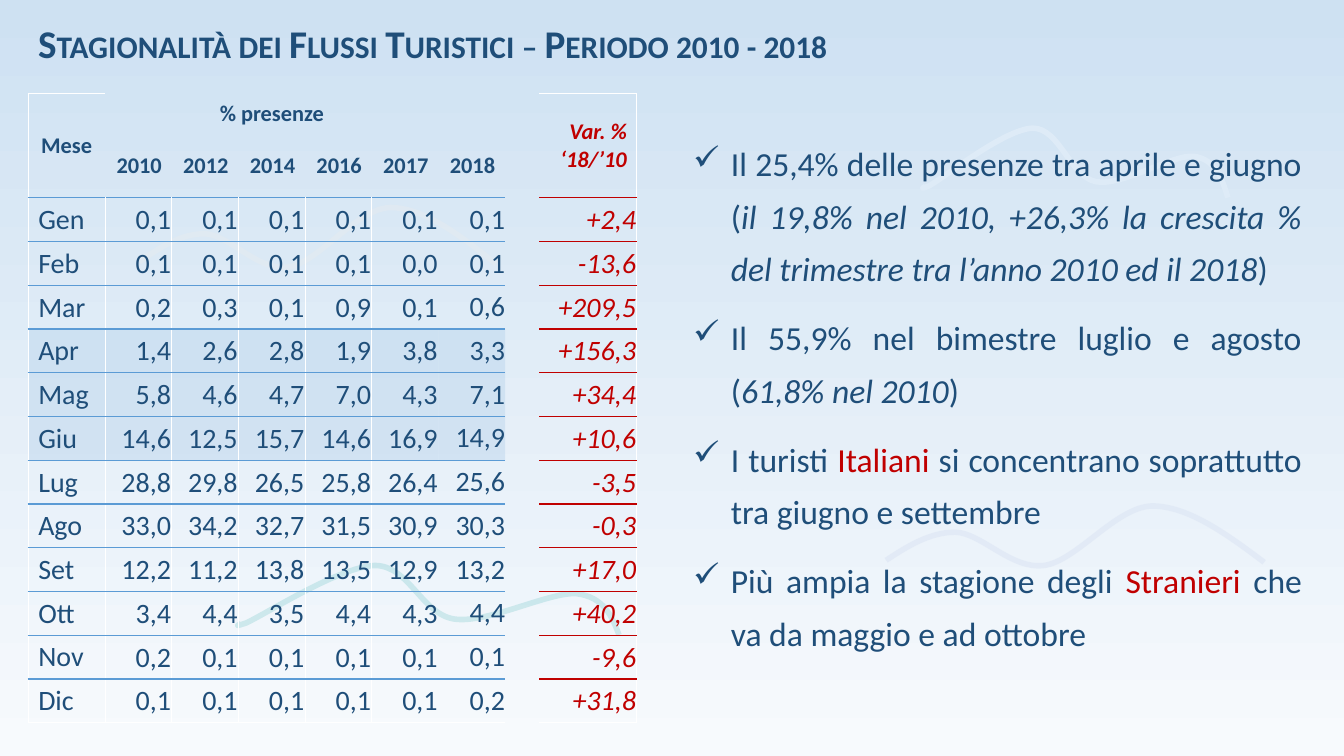
from dataclasses import dataclass
from typing import Any, Optional

from lxml import etree
from pptx import Presentation
from pptx.dml.color import RGBColor
from pptx.enum.text import MSO_ANCHOR, MSO_AUTO_SIZE, PP_ALIGN
from pptx.oxml.ns import qn
from pptx.util import Cm, Pt

CENTER, RIGHT, JUSTIFY = PP_ALIGN.CENTER, PP_ALIGN.RIGHT, PP_ALIGN.JUSTIFY
LEFT, MIDDLE, TOP = PP_ALIGN.LEFT, MSO_ANCHOR.MIDDLE, MSO_ANCHOR.TOP
FIT = MSO_AUTO_SIZE.SHAPE_TO_FIT_TEXT

NAVY = RGBColor(0x1F, 0x4E, 0x79)
RED = RGBColor(0xC0, 0x00, 0x00)
BLUE = RGBColor(0x5B, 0x9B, 0xD5)
WHITE = RGBColor(0xFF, 0xFF, 0xFF)
SPRING = RGBColor(0xBD, 0xD7, 0xEE)
SKY_LOW = RGBColor(0xF7, 0xFA, 0xFD)
SKY_HIGH = RGBColor(0xCE, 0xE1, 0xF2)
GREY = RGBColor(0xED, 0xED, 0xED)
LAVENDER = RGBColor(0xDA, 0xE3, 0xF3)
TEAL = RGBColor(0x00, 0x99, 0x99)
PALE_BLUE = RGBColor(0xDE, 0xEB, 0xF7)

FONT = "Calibri"
NO_STYLE = "{2D5ABB26-0587-4C30-8999-92F81FD0307C}"

# Wave outlines in cm: a start point, then three points for each curve
DOUBLE_HUMP = [(0, 1.37), (0.5, 1.02), (1.04, 0.66), (1.65, 0.66), (2.28, 0.69),
               (2.97, 1.6), (3.75, 1.5), (4.52, 1.4), (5.46, 0.03), (6.32, 0),
               (7.18, 0), (8.1, 0.71), (8.99, 1.42)]
FALLING = [(0, 1.47), (-0.23, 1.57), (0.13, 1.45), (0.13, 1.45), (0.69, 1.19),
           (2.49, 0.03), (3.38, 0), (4.24, 0), (4.55, 1.22), (5.38, 1.35),
           (6.22, 1.47), (7.77, 0.66), (8.46, 0.71), (9.14, 0.79), (9.35, 1.27),
           (9.53, 1.75)]


@dataclass
class Wave:
    outline: list[tuple[float, float]]
    left: float
    top: float
    stretch: float
    color: RGBColor
    opacity: int


@dataclass
class Span:
    text: str
    italic: bool = False
    color: RGBColor = NAVY


WAVES = [
    Wave(DOUBLE_HUMP, 3.51, 5.23, 1, GREY, 30),
    Wave(DOUBLE_HUMP, 22.33, 12.75, 1.06, LAVENDER, 50),
    Wave(FALLING, 6.07, 14.25, 1, TEAL, 15),
    Wave(FALLING, 23.32, 3.23, 0.8, PALE_BLUE, 100),
]

YEARS = ["2010", "2012", "2014", "2016", "2017", "2018"]
MONTHS = [line.split() for line in """\
Gen 0,1 0,1 0,1 0,1 0,1 0,1 +2,4
Feb 0,1 0,1 0,1 0,1 0,0 0,1 -13,6
Mar 0,2 0,3 0,1 0,9 0,1 0,6 +209,5
Apr 1,4 2,6 2,8 1,9 3,8 3,3 +156,3
Mag 5,8 4,6 4,7 7,0 4,3 7,1 +34,4
Giu 14,6 12,5 15,7 14,6 16,9 14,9 +10,6
Lug 28,8 29,8 26,5 25,8 26,4 25,6 -3,5
Ago 33,0 34,2 32,7 31,5 30,9 30,3 -0,3
Set 12,2 11,2 13,8 13,5 12,9 13,2 +17,0
Ott 3,4 4,4 3,5 4,4 4,3 4,4 +40,2
Nov 0,2 0,1 0,1 0,1 0,1 0,1 -9,6
Dic 0,1 0,1 0,1 0,1 0,1 0,2 +31,8""".splitlines()]
SPRING_MONTHS = ("Apr", "Mag", "Giu")
GAP_COL, VAR_COL, LAST_YEAR_COL = 7, 8, 6
COL_WIDTHS = [1.94] + [1.68] * len(YEARS) + [0.86, 2.46]

POINTS = [
    [Span("Il 25,4% delle presenze tra aprile e giugno ("),
     Span("il 19,8% nel 2010, +26,3% la crescita % del trimestre "
          "tra l’anno 2010 ed il 2018", italic=True), Span(")")],
    [Span("Il 55,9% nel bimestre luglio e agosto ("),
     Span("61,8% nel 2010", italic=True), Span(")")],
    [Span("I turisti "), Span("Italiani", color=RED),
     Span(" si concentrano soprattutto tra giugno e settembre")],
    [Span("Più ampia la stagione degli "), Span("Stranieri", color=RED),
     Span(" che va da maggio e ad ottobre")],
]


def add_text(p: Any, text: str, *, size: float, bold: bool = False, italic: bool = False,
             color: RGBColor = NAVY, small_caps: bool = False) -> None:
    r = p.add_run()
    r.text = text
    f = r.font
    f.name, f.size, f.bold, f.italic = FONT, Pt(size), bold, italic
    f.color.rgb = color
    if small_caps:
        f._element.set("cap", "small")


def set_opacity(element: Any, percent: int) -> None:
    clr = next(element.iter(qn("a:srgbClr")))
    etree.SubElement(clr, qn("a:alpha"), val=str(percent * 1000))


def add_wave(s: Any, wave: Wave) -> None:
    pts = [(Cm(wave.left + x * wave.stretch), Cm(wave.top + y)) for x, y in wave.outline]
    builder = s.shapes.build_freeform(*pts[0])
    builder.add_line_segments(pts[1:], close=False)
    sp = builder.convert_to_shape()
    sp.shadow.inherit = False
    sp.fill.background()
    sp.line.color.rgb = wave.color
    sp.line.width = Pt(4)
    if wave.opacity < 100:
        set_opacity(sp.line._ln, wave.opacity)
    # Turn each three segments into one cubic curve
    route = next(sp._element.iter(qn("a:path")))
    segments = route.findall(qn("a:lnTo"))
    for i in range(0, len(segments), 3):
        curve = etree.SubElement(route, qn("a:cubicBezTo"))
        for segment in segments[i:i + 3]:
            curve.append(segment[0])
            route.remove(segment)


def add_box(s: Any, left: float, top: float, width: float, height: float) -> Any:
    tf = s.shapes.add_textbox(Cm(left), Cm(top), Cm(width), Cm(height)).text_frame
    tf.word_wrap = True
    tf.auto_size = FIT
    return tf


def format_cell(cell: Any, edges: dict[str, RGBColor], fill: Optional[RGBColor] = None) -> None:
    tc_pr = cell._tc.get_or_add_tcPr()
    for side in "LRTB":
        ln = etree.SubElement(tc_pr, qn(f"a:ln{side}"), w=str(Pt(1)))
        if side in edges:
            solid = etree.SubElement(ln, qn("a:solidFill"))
            etree.SubElement(solid, qn("a:srgbClr"), val=str(edges[side]))
        else:
            etree.SubElement(ln, qn("a:noFill"))
    if fill is None:
        cell.fill.background()
    else:
        cell.fill.solid()
        cell.fill.fore_color.rgb = fill
        set_opacity(tc_pr.find(qn("a:solidFill")), 50)


def fill_cell(cell: Any, text: str, align: Any, anchor: Any = MIDDLE, **fmt: Any) -> None:
    cell.vertical_anchor = anchor
    p = cell.text_frame.paragraphs[0]
    p.alignment = align
    add_text(p, text, **fmt)


def month_edges(col: int, last: bool) -> dict[str, RGBColor]:
    if col == GAP_COL:
        return {}
    rule = RED if col == VAR_COL else BLUE
    edges = {"T": rule, "B": WHITE if last else rule}
    if col < LAST_YEAR_COL:
        edges["L"] = WHITE
    if col < LAST_YEAR_COL - 1 or col == VAR_COL:
        edges["R"] = WHITE
    return edges


def add_month_table(s: Any) -> None:
    rows = len(MONTHS) + 2
    frame = s.shapes.add_table(rows, len(COL_WIDTHS), Cm(0.71), Cm(2.36), Cm(15.34), Cm(15.16))
    tbl = frame.table
    tbl.first_row = tbl.horz_banding = False
    next(tbl._tbl.iter(qn("a:tableStyleId"))).text = NO_STYLE
    for column, width in zip(tbl.columns, COL_WIDTHS):
        column.width = Cm(width)
    for i, row in enumerate(tbl.rows):
        row.height = Cm(1.04 if i else 0.71)

    # Header
    header_edges = {(0, 0): {"L": WHITE, "T": WHITE, "B": BLUE},
                    (0, VAR_COL): {"T": WHITE, "R": WHITE, "B": RED}}
    header_edges.update({(1, c): {"B": BLUE} for c in range(1, GAP_COL)})
    for r in range(2):
        for c in range(len(COL_WIDTHS)):
            format_cell(tbl.cell(r, c), header_edges.get((r, c), {}))
    tbl.cell(0, 0).merge(tbl.cell(1, 0))
    tbl.cell(0, 1).merge(tbl.cell(0, 5))
    tbl.cell(0, VAR_COL).merge(tbl.cell(1, VAR_COL))
    fill_cell(tbl.cell(0, 0), "Mese", CENTER, size=16, bold=True)
    fill_cell(tbl.cell(0, 1), "% presenze", CENTER, size=16, bold=True)
    fill_cell(tbl.cell(0, VAR_COL), "Var. % ‘18/’10", RIGHT,
              size=16, bold=True, italic=True, color=RED)
    for c, year in enumerate(YEARS, 1):
        fill_cell(tbl.cell(1, c), year, RIGHT, size=16, bold=True)

    # Months
    for r, (month, *shares, change) in enumerate(MONTHS, 2):
        for c, text in enumerate([month, *shares, "", change]):
            cell = tbl.cell(r, c)
            shaded = month in SPRING_MONTHS and c < GAP_COL
            format_cell(cell, month_edges(c, r == rows - 1), SPRING if shaded else None)
            if c == 0:
                fill_cell(cell, text, LEFT, TOP, size=20)
            elif c != GAP_COL:
                inset = Cm(0 if c == LAST_YEAR_COL else 0.02)
                cell.margin_left = cell.margin_top = cell.margin_right = inset
                cell.margin_bottom = 0
                is_change = c == VAR_COL
                fill_cell(cell, text, RIGHT, size=20, italic=is_change,
                          color=RED if is_change else NAVY)


def add_points(s: Any) -> None:
    tf = add_box(s, 17.37, 3.18, 15.54, 13.54)
    tf.margin_left = tf.margin_right = Cm(0.1)
    for i, spans in enumerate(POINTS):
        p = tf.add_paragraph() if i else tf.paragraphs[0]
        p.alignment, p.line_spacing = JUSTIFY, 1.3
        p.space_before = p.space_after = Pt(6)
        p_pr = p._p.get_or_add_pPr()
        p_pr.set("marL", str(Cm(0.95)))
        p_pr.set("indent", str(-Cm(0.95)))
        etree.SubElement(p_pr, qn("a:buChar"), char="✓")
        for span in spans:
            add_text(p, span.text, size=24, italic=span.italic, color=span.color)


def main() -> None:
    prs = Presentation()
    prs.slide_width, prs.slide_height = Cm(33.87), Cm(19.05)
    s = prs.slides.add_slide(prs.slide_layouts[6])

    # Background
    sky = s.background.fill
    sky.gradient()
    sky.gradient_angle = 90
    for stop, color in zip(sky.gradient_stops, (SKY_LOW, SKY_HIGH)):
        stop.color.rgb = color
    for wave in WAVES:
        add_wave(s, wave)

    # Content
    title = add_box(s, 0.71, 0.36, 22.81, 1.45)
    add_text(title.paragraphs[0], "Stagionalità dei Flussi Turistici – Periodo 2010 - 2018",
             size=28, bold=True, small_caps=True)
    add_month_table(s)
    add_points(s)
    prs.save("out.pptx")


if __name__ == "__main__":
    main()
